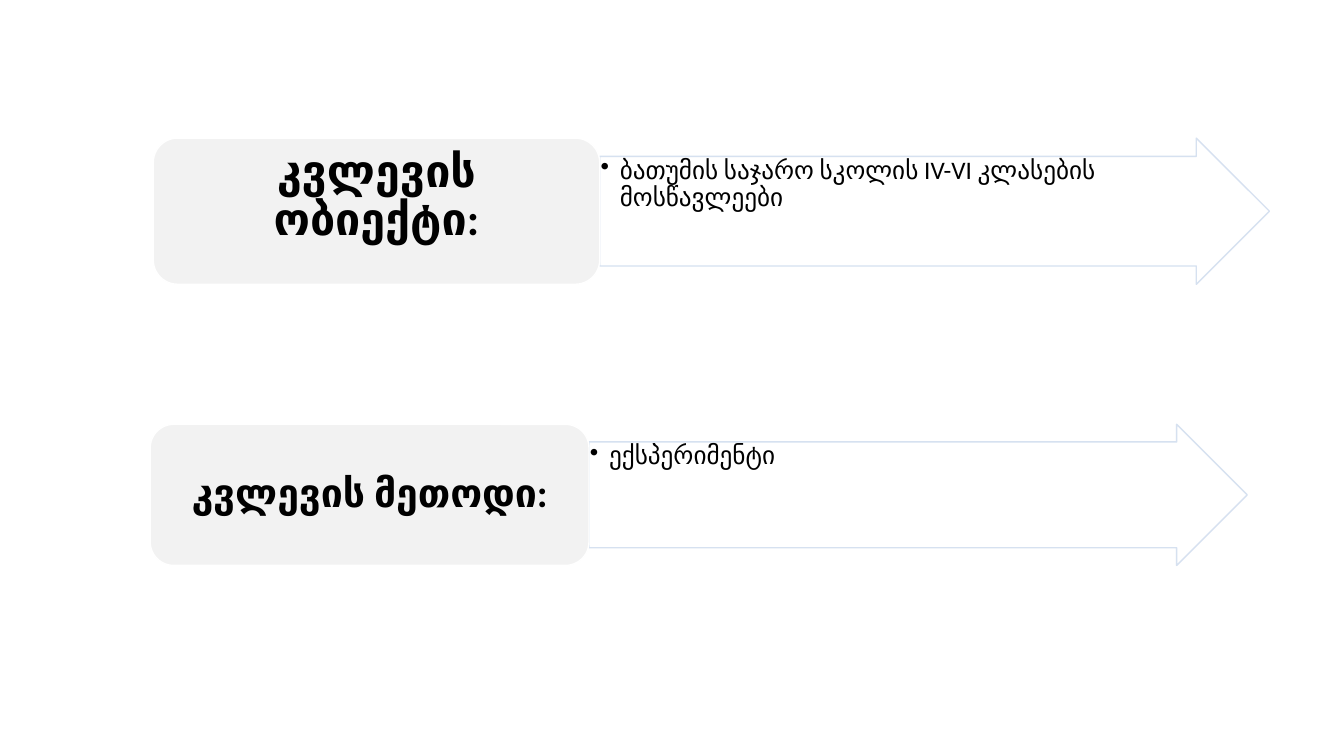
from pptx import Presentation, util as u
from pptx.dml import color
from pptx.enum import shapes, text
from pptx.oxml.ns import qn
from lxml import etree

IN = u.Inches


def paint(fmt, tone, alpha=None):
    """Give a fill a solid hex colour and an optional opacity in percent."""
    fmt.solid()
    fmt.fore_color.rgb = color.RGBColor.from_string(tone)
    if alpha:
        for node in fmt._xPr.iter(qn("a:srgbClr")):
            if node.getparent().getparent() is fmt._xPr:
                etree.SubElement(node, qn("a:alpha"), val=str(alpha * 1000))


def panel(slide, kind, box, fill, line, alpha=None):
    """Add a filled shape with a thin outline in the given box."""
    shape = slide.shapes.add_shape(kind, *map(IN, box))
    shape.shadow.inherit = False
    paint(shape.fill, fill, alpha)
    paint(shape.line.fill, line, alpha)
    shape.line.width = u.Pt(1)
    return shape


def label(slide, box, words, size, pads, bold=False):
    """Add wrapped Calibri text with left, top, right and bottom insets."""
    frame = slide.shapes.add_textbox(*map(IN, box)).text_frame
    frame.word_wrap = True
    frame.margin_left, frame.margin_top, frame.margin_right, frame.margin_bottom = map(IN, pads)
    frame.text = words
    para = frame.paragraphs[0]
    para.line_spacing = 0.9
    font = para.runs[0].font
    font.name, font.size, font.bold = "Calibri", u.Pt(size), bold
    paint(font.fill, "000000")
    return frame


def arrow(slide, box, words):
    """Draw the arrow and its bulleted text in the given box."""
    x, y, w, h = box
    shape = panel(slide, shapes.MSO_SHAPE.RIGHT_ARROW, box, "FFFFFF", "D2DEEF", 90)
    shape.adjustments[0], shape.adjustments[1] = 0.75, 0.5
    inner = (x, y + h / 8, w - h * 3 / 8, h * 0.75)
    para = label(slide, inner, words, 18, [0.01] * 4).paragraphs[0]
    props = para._p.get_or_add_pPr()
    props.set("marL", str(IN(0.19)))
    props.set("indent", str(IN(-0.19)))
    etree.SubElement(props, qn("a:buChar"), char="•")


def card(slide, box, words, size, foot):
    """Draw the rounded card and its bold centred title in the given box."""
    x, y, w, h = box
    panel(slide, shapes.MSO_SHAPE.ROUNDED_RECTANGLE, box, "F2F2F2", "FFFFFF")
    inner = (x + 0.07, y + 0.07, w - 0.14, h - 0.14)
    frame = label(slide, inner, words, size, (0.13, 0.07, 0.13, foot), True)
    frame.vertical_anchor = text.MSO_ANCHOR.MIDDLE
    frame.paragraphs[0].alignment = text.PP_ALIGN.CENTER


def row(slide, box, title, size, foot, words):
    """Split the box into a title card on the left and an arrow on the right."""
    x, y, w, h = box
    part = w * 0.4
    arrow(slide, (x + part, y, w - part, h), words)
    card(slide, (x, y, part, h), title, size, foot)


def main():
    """Build the slide with its two rows and save it."""
    deck = Presentation()
    deck.slide_width, deck.slide_height = IN(13.33), IN(7.5)
    slide = deck.slides.add_slide(deck.slide_layouts[6])
    row(slide, (1.52, 1.37, 11.07, 1.45), "კვლევის ობიექტი:", 32, 0.35,
        "ბათუმის საჯარო სკოლის IV-VI კლასების მოსწავლეები")
    row(slide, (1.49, 4.21, 10.88, 1.4), "კვლევის მეთოდი:", 28, 0.07,
        "ექსპერიმენტი")
    deck.save("out.pptx")


if __name__ == "__main__":
    main()
